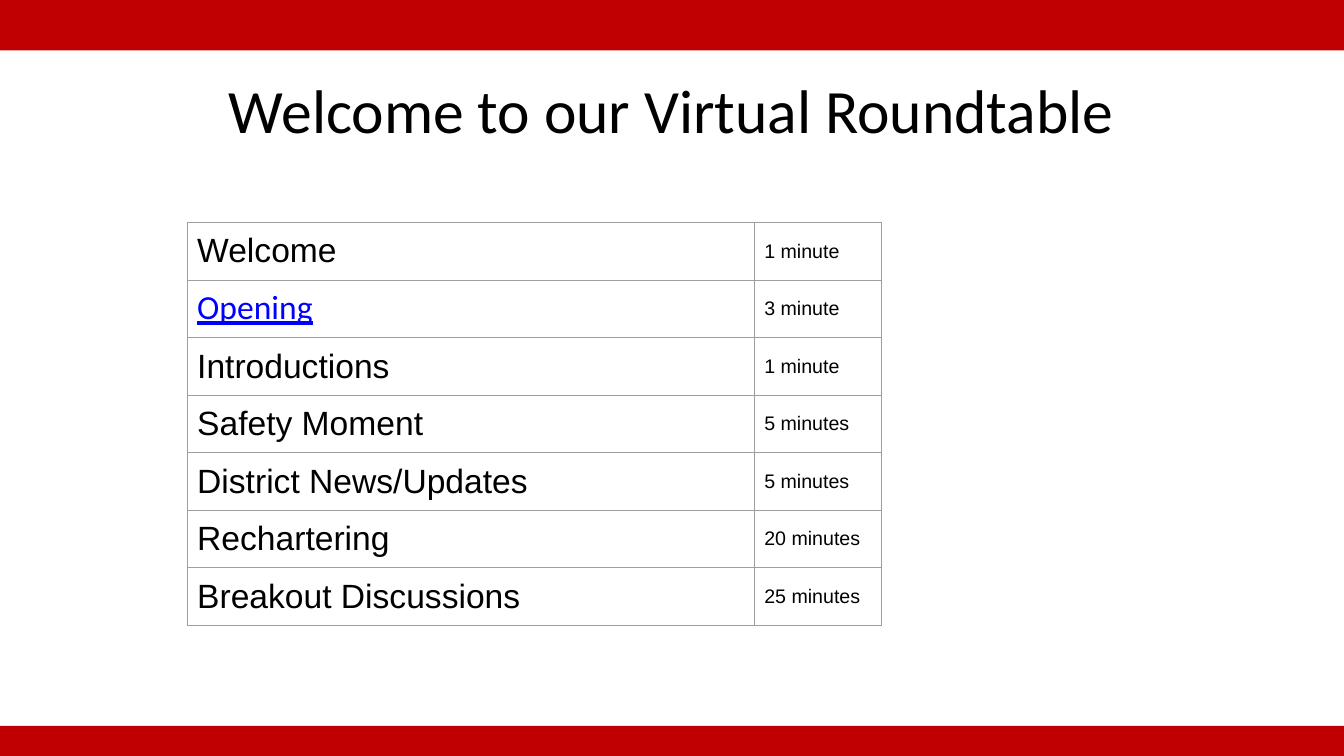
from dataclasses import dataclass

from lxml.etree import SubElement
from pptx import Presentation
from pptx.dml.color import RGBColor as Rgb
from pptx.enum.shapes import MSO_SHAPE as Kind
from pptx.enum.text import MSO_ANCHOR as Anchor, MSO_AUTO_SIZE as Fit, PP_ALIGN as Align
from pptx.oxml.ns import qn
from pptx.slide import Slide
from pptx.table import Table, _Cell as Cell
from pptx.util import Cm, Pt

HUES = {"red": "C00000", "black": "000000", "blue": "0000FF", "grey": "9E9E9E"}
WIDTH, HEIGHT = 33.87, 19.05
ROW = 1.45


@dataclass
class Bar:
    top: float
    height: float


@dataclass
class Item:
    topic: str
    time: str
    linked: bool = False


BARS = [Bar(0, 1.27), Bar(18.29, 0.76)]
ITEMS = [
    Item("Welcome", "1 minute"),
    Item("Opening", "3 minute", True),
    Item("Introductions", "1 minute"),
    Item("Safety Moment", "5 minutes"),
    Item("District News/Updates", "5 minutes"),
    Item("Rechartering", "20 minutes"),
    Item("Breakout Discussions", "25 minutes"),
]


def style(target: object, values: dict) -> None:
    for name, value in values.items():
        setattr(target, name, value)


def write(frame: object, text: str, size: int, face: str, hue: str = "black") -> object:
    line = frame.paragraphs[0]
    run = line.add_run()
    run.text = text
    style(run.font, {"size": Pt(size), "name": face})
    run.font.color.rgb = Rgb.from_string(HUES[hue])
    return line


def draw_bar(slide: Slide, bar: Bar) -> None:
    shape = slide.shapes.add_shape(Kind.RECTANGLE, 0, Cm(bar.top), Cm(WIDTH), Cm(bar.height))
    shape.shadow.inherit = False
    shape.fill.solid()
    shape.fill.fore_color.rgb = Rgb.from_string(HUES["red"])
    shape.line.fill.background()


def draw_title(slide: Slide) -> None:
    title = slide.shapes.title
    style(title, {"left": Cm(1.69), "top": Cm(1.47), "width": Cm(30.48), "height": Cm(2.54)})
    frame = title.text_frame
    style(frame, {"vertical_anchor": Anchor.MIDDLE, "word_wrap": True, "auto_size": Fit.NONE})
    line = write(frame, "Welcome to our Virtual Roundtable", 44, "Calibri")
    line.alignment = Align.CENTER


def frame_cell(cell: Cell) -> None:
    props = cell._tc.get_or_add_tcPr()
    for side in ("lnL", "lnR", "lnT", "lnB"):
        edge = SubElement(props, qn(f"a:{side}"), w=str(Pt(0.75)))
        fill = SubElement(edge, qn("a:solidFill"))
        SubElement(fill, qn("a:srgbClr"), val=HUES["grey"])
    cell.fill.background()
    sides = ("left", "right", "top", "bottom")
    style(cell, {f"margin_{side}": Cm(0.25) for side in sides})


def fill_row(table: Table, index: int, item: Item) -> None:
    table.rows[index].height = Cm(ROW)
    topic, time = table.cell(index, 0), table.cell(index, 1)
    for cell in (topic, time):
        frame_cell(cell)
    if item.linked:
        line = write(topic.text_frame, item.topic, 24, "Calibri", "blue")
        line.line_spacing = 0.9
        line.runs[0].font.underline = True
    else:
        write(topic.text_frame, item.topic, 24, "Arial")
    time.vertical_anchor = Anchor.MIDDLE
    write(time.text_frame, item.time, 14, "Arial")


def draw_table(slide: Slide) -> None:
    widths = (14.29, 3.2)
    count = len(ITEMS)
    table = slide.shapes.add_table(
        count, 2, Cm(4.72), Cm(5.61), Cm(sum(widths)), Cm(ROW * count)
    ).table
    style(table, {"first_row": False, "horz_banding": False})
    for column, width in zip(table.columns, widths):
        column.width = Cm(width)
    for index, item in enumerate(ITEMS):
        fill_row(table, index, item)


def main() -> None:
    deck = Presentation()
    style(deck, {"slide_width": Cm(WIDTH), "slide_height": Cm(HEIGHT)})
    slide = deck.slides.add_slide(deck.slide_layouts[5])
    for bar in BARS:
        draw_bar(slide, bar)
    draw_title(slide)
    draw_table(slide)
    deck.save("out.pptx")


if __name__ == "__main__":
    main()
